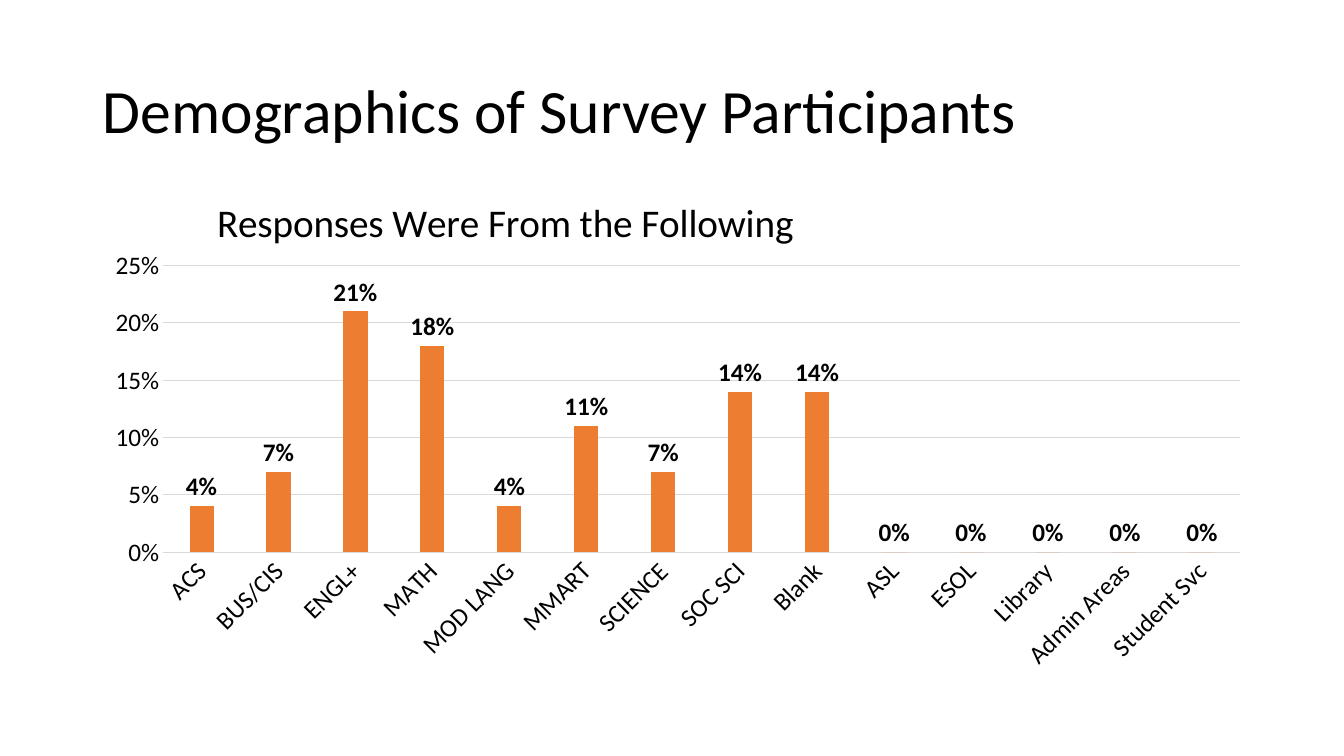
from typing import NamedTuple

from lxml.etree import SubElement
from pptx import Presentation
from pptx.chart.data import CategoryChartData
from pptx.dml.color import RGBColor
from pptx.enum.chart import XL_CHART_TYPE, XL_LABEL_POSITION, XL_TICK_MARK
from pptx.enum.text import MSO_ANCHOR
from pptx.oxml.ns import qn
from pptx.util import Cm, Pt

COLORS = {"text": "000000", "bar": "ED7D31", "rule": "D9D9D9"}
FONT = "Calibri"


class Department(NamedTuple):
    name: str
    share: float


class Region(NamedTuple):
    """Part of the chart area, in fractions of its size."""
    x: float
    y: float
    w: float = 0
    h: float = 0


DEPARTMENTS = [
    Department("ACS", 0.04),
    Department("BUS/CIS", 0.07),
    Department("ENGL+", 0.21),
    Department("MATH", 0.18),
    Department("MOD LANG", 0.04),
    Department("MMART", 0.11),
    Department("SCIENCE", 0.07),
    Department("SOC SCI", 0.14),
    Department("Blank", 0.14),
    Department("ASL", 0),
    Department("ESOL", 0),
    Department("Library", 0),
    Department("Admin Areas", 0),
    Department("Student Svc", 0),
]


def style_font(font, size: float, bold: bool = False) -> None:
    font.name = FONT
    font.size = Pt(size)
    font.bold = bold
    font.color.rgb = RGBColor.from_string(COLORS["text"])


def style_rule(line) -> None:
    line.color.rgb = RGBColor.from_string(COLORS["rule"])
    line.width = Pt(0.75)


def place(element, region: Region, position: int) -> None:
    """Give a chart title or plot area a manual layout."""
    for automatic in element.findall(qn("c:layout")):
        element.remove(automatic)
    layout = SubElement(element, qn("c:layout"))
    element.insert(position, layout)
    manual = SubElement(layout, qn("c:manualLayout"))
    settings = {"xMode": "edge", "yMode": "edge", "x": region.x, "y": region.y}
    if region.w:
        settings = {"layoutTarget": "inner", **settings, "w": region.w, "h": region.h}
    for tag, value in settings.items():
        SubElement(manual, qn(f"c:{tag}")).set("val", str(value))


def add_title(slide) -> None:
    title = slide.shapes.title
    title.left, title.top, title.width, title.height = Cm(2.34), Cm(1.02), Cm(29.21), Cm(3.68)
    title.text_frame.vertical_anchor = MSO_ANCHOR.MIDDLE
    title.text_frame.word_wrap = True
    heading = title.text_frame.paragraphs[0]
    heading.line_spacing = 0.9
    # The blank template centres titles
    heading._p.get_or_add_pPr().set("algn", "l")
    run = heading.add_run()
    run.text = "Demographics of Survey Participants"
    style_font(run.font, 44)


def add_responses_chart(slide) -> None:
    responses = CategoryChartData(number_format="0%")
    responses.categories = [department.name for department in DEPARTMENTS]
    responses.add_series("Series 1", [department.share for department in DEPARTMENTS])
    chart = slide.shapes.add_chart(
        XL_CHART_TYPE.COLUMN_CLUSTERED, Cm(2.34), Cm(4.24), Cm(29.51), Cm(12.9), responses
    ).chart
    style_font(chart.font, 10)
    chart.has_legend = False

    # Chart heading
    chart.has_title = True
    heading = chart.chart_title.text_frame.paragraphs[0].add_run()
    heading.text = "Responses Were From the Following"
    style_font(heading.font, 28)
    chart.chart_title.include_in_layout = False
    place(chart.chart_title._element, Region(0.1, 0.04), 1)
    place(chart._chartSpace.chart.plotArea, Region(0.06, 0.19, 0.92, 0.56), 0)

    # Columns and their labels
    plot = chart.plots[0]
    plot.gap_width, plot.overlap, plot.vary_by_categories = 219, -27, False
    columns = plot.series[0].format.fill
    columns.solid()
    columns.fore_color.rgb = RGBColor.from_string(COLORS["bar"])
    plot.has_data_labels = True
    shares = plot.data_labels
    shares.show_value = True
    shares.position = XL_LABEL_POSITION.OUTSIDE_END
    shares.number_format, shares.number_format_is_linked = "0%", False
    style_font(shares.font, 18, bold=True)

    # Axes
    departments, percent = chart.category_axis, chart.value_axis
    for axis in (departments, percent):
        axis.major_tick_mark = axis.minor_tick_mark = XL_TICK_MARK.NONE
        style_font(axis.tick_labels.font, 18)
    style_rule(departments.format.line)
    departments._element.find(qn("c:txPr")).find(qn("a:bodyPr")).set("rot", "-2700000")
    percent.minimum_scale, percent.maximum_scale, percent.major_unit = 0, 0.25, 0.05
    percent.tick_labels.number_format = "0%"
    percent.tick_labels.number_format_is_linked = False
    percent.format.line.fill.background()
    style_rule(percent.major_gridlines.format.line)


def main() -> None:
    presentation = Presentation()
    presentation.slide_width, presentation.slide_height = Cm(33.87), Cm(19.05)
    slide = presentation.slides.add_slide(presentation.slide_layouts[5])
    add_title(slide)
    add_responses_chart(slide)
    presentation.save("out.pptx")


if __name__ == "__main__":
    main()
